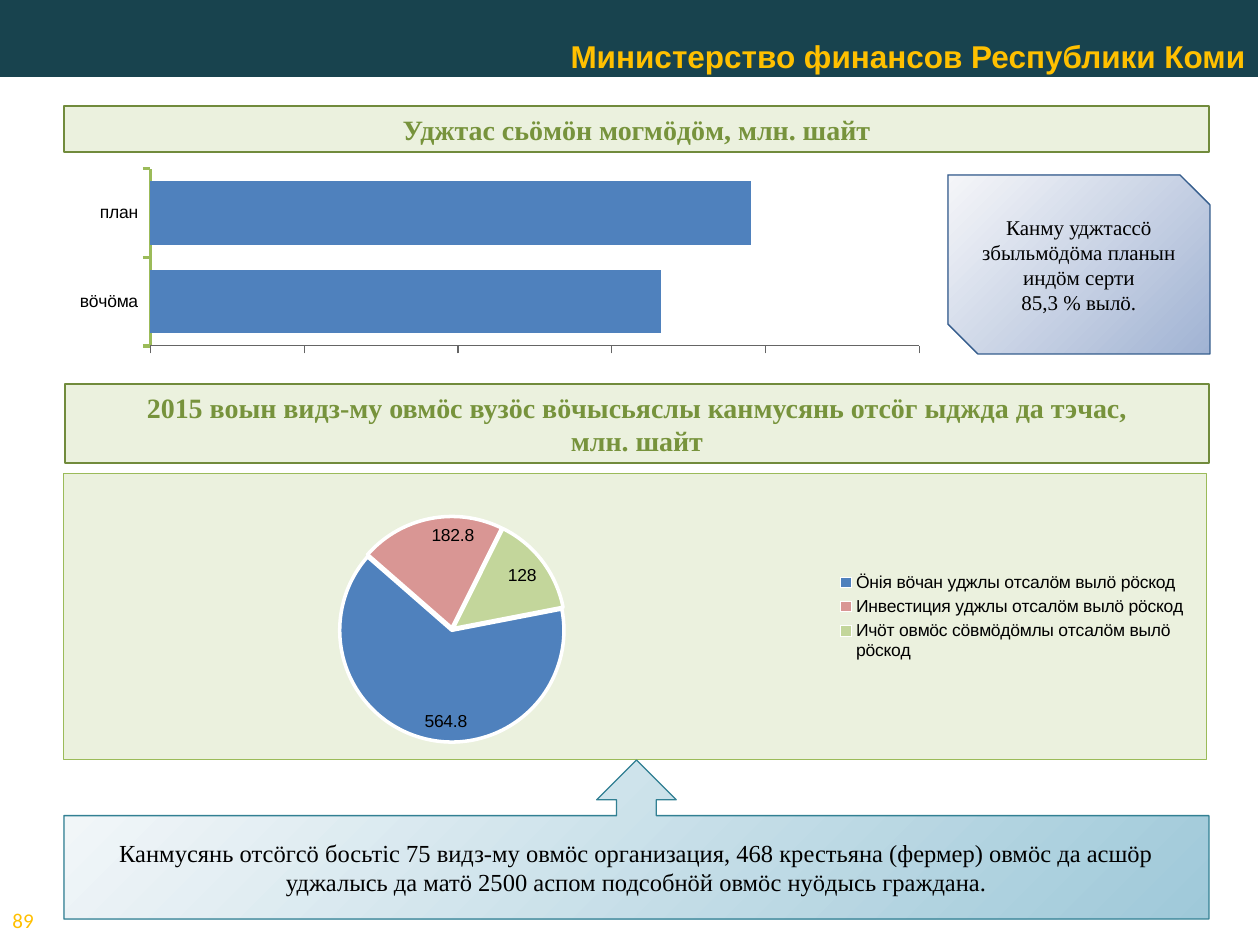
from lxml.etree import SubElement
from pptx import Presentation
from pptx.chart.data import CategoryChartData
from pptx.dml.color import RGBColor
from pptx.enum.chart import (XL_CHART_TYPE, XL_LABEL_POSITION, XL_LEGEND_POSITION,
                             XL_TICK_LABEL_POSITION, XL_TICK_MARK)
from pptx.enum.shapes import MSO_SHAPE
from pptx.enum.text import MSO_ANCHOR, PP_ALIGN
from pptx.oxml import parse_xml
from pptx.oxml.ns import nsdecls, qn
from pptx.util import Pt

EMU_PER_PX = 914400 / 126
SERIF = "Times New Roman"
PALE_GREEN = "EBF1DE"
GOLD = "FFC000"
HEADING = {"size": Pt(16), "name": SERIF, "bold": True}


def px(length):
    return round(length * EMU_PER_PX)


def frame(box):
    return [px(length) for length in box]


def rgb(value):
    return RGBColor.from_string(value)


def set_attributes(target, values):
    for name, value in values.items():
        setattr(target, name, value)


def write(text_frame, lines, font, color, align=PP_ALIGN.CENTER, **layout):
    set_attributes(text_frame, {"word_wrap": True, **layout})
    text_frame.text = "\n".join(lines)
    for paragraph in text_frame.paragraphs:
        paragraph.alignment = align
        set_attributes(paragraph.font, font)
        paragraph.font.color.rgb = rgb(color)


def outline(line, color, width=0.75):
    line.color.rgb = rgb(color)
    line.width = Pt(width)


def add_panel(slide, preset, box, fill, border=None, adjustments=()):
    """Add a preset shape; a pair of fills makes a gradient from the top left corner."""
    panel = slide.shapes.add_shape(preset, *frame(box))
    panel.shadow.inherit = False
    for index, value in enumerate(adjustments):
        panel.adjustments[index] = value
    if isinstance(fill, str):
        panel.fill.solid()
        panel.fill.fore_color.rgb = rgb(fill)
    else:
        panel.fill.gradient()
        for stop, position, color in zip(panel.fill.gradient_stops, (0, 1), fill):
            stop.position = position
            stop.color.rgb = rgb(color)
        gradient = panel.element.spPr.find(qn("a:gradFill"))
        gradient.remove(gradient.find(qn("a:lin")))
        SubElement(gradient, qn("a:path"), {"path": "circle"})
    if border:
        outline(panel.line, border)
    else:
        panel.line.fill.background()
    return panel.text_frame


def add_heading(slide, box, lines):
    text_frame = add_panel(slide, MSO_SHAPE.RECTANGLE, box, PALE_GREEN, "718B3C")
    write(text_frame, lines, HEADING, "77933C", vertical_anchor=MSO_ANCHOR.TOP)


def place_part(part, index, fractions, inner=False):
    """Give a plot area or legend a fixed place, as fractions of the chart."""
    for old in part.findall(qn("c:layout")):
        part.remove(old)
    layout = parse_xml(f"<c:layout {nsdecls('c')}><c:manualLayout/></c:layout>")
    settings = {"layoutTarget": "inner"} if inner else {}
    settings.update(xMode="edge", yMode="edge")
    settings.update(zip("xywh", fractions))
    for name, value in settings.items():
        SubElement(layout[0], qn(f"c:{name}"), {"val": str(value)})
    part.insert(index, layout)


def add_chart(slide, kind, box, categories, values, plot_place, fill, border=None):
    data = CategoryChartData()
    data.categories = categories
    data.add_series("Series 1", values)
    chart = slide.shapes.add_chart(kind, *frame(box), data).chart
    chart.has_title = False
    chart.has_legend = False
    set_attributes(chart.font, {"size": Pt(10), "name": "Arial"})
    chart.font.color.rgb = rgb("000000")
    chart_element = chart.element.find(qn("c:chart"))
    place_part(chart_element.find(qn("c:plotArea")), 0, plot_place, inner=True)
    stroke = f'<a:solidFill><a:srgbClr val="{border}"/></a:solidFill>' if border else "<a:noFill/>"
    chart_element.addnext(parse_xml(
        f'<c:spPr {nsdecls("c", "a")}><a:solidFill><a:srgbClr val="{fill}"/></a:solidFill>'
        f'<a:ln w="{Pt(0.75)}">{stroke}</a:ln></c:spPr>'))
    return chart


def add_plan_chart(slide):
    chart = add_chart(slide, XL_CHART_TYPE.BAR_CLUSTERED, (63, 165, 874, 189),
                      ["вӧчӧма", "план"], [85, 100], (0.1, 0.02, 0.88, 0.94), "FFFFFF")
    plot = chart.plots[0]
    set_attributes(plot, {"gap_width": 39, "vary_by_categories": False})
    bars = plot.series[0].format.fill
    bars.solid()
    bars.fore_color.rgb = rgb("4F81BD")
    ticks = {"has_major_gridlines": False, "major_tick_mark": XL_TICK_MARK.OUTSIDE,
             "minor_tick_mark": XL_TICK_MARK.NONE}
    set_attributes(chart.category_axis, ticks)
    outline(chart.category_axis.format.line, "9BBB59", 2)
    set_attributes(chart.value_axis, {
        **ticks, "minimum_scale": 0, "maximum_scale": 128, "major_unit": 25.6,
        "tick_label_position": XL_TICK_LABEL_POSITION.NONE})
    outline(chart.value_axis.format.line, "656565")


def add_support_chart(slide):
    categories = ["Ӧнiя вӧчан уджлы отсалӧм вылӧ рӧскод",
                  "Инвестиция уджлы отсалӧм вылӧ рӧскод",
                  "Ичӧт овмӧс сӧвмӧдӧмлы отсалӧм вылӧ рӧскод"]
    chart = add_chart(slide, XL_CHART_TYPE.PIE, (63, 473, 1144, 287), categories,
                      [564.8, 182.8, 128], (0.24, 0.15, 0.2, 0.79), PALE_GREEN, "9BBB59")
    chart.has_legend = True
    set_attributes(chart.legend, {"position": XL_LEGEND_POSITION.RIGHT,
                                  "include_in_layout": False})
    place_part(chart.element.find(".//" + qn("c:legend")), 1, (0.675, 0.33, 0.31, 0.34))
    plot = chart.plots[0]
    plot.has_data_labels = True
    set_attributes(plot.data_labels, {"show_value": True, "show_percentage": False,
                                      "position": XL_LABEL_POSITION.INSIDE_END})
    pie = plot.series[0]
    for index, color in enumerate(("4F81BD", "D99694", "C3D69B")):
        slice_format = pie.points[index].format
        slice_format.fill.solid()
        slice_format.fill.fore_color.rgb = rgb(color)
        outline(slice_format.line, "FFFFFF", 2)
    explosion = parse_xml(f'<c:explosion {nsdecls("c")} val="1"/>')
    pie.points[0].format
    pie._element.find(qn("c:dPt")).addprevious(explosion)
    rotation = plot._element.find(qn("c:firstSliceAng"))
    if rotation is None:
        rotation = SubElement(plot._element, qn("c:firstSliceAng"))
    rotation.set("val", "79")


def main():
    deck = Presentation()
    set_attributes(deck, {"slide_width": px(1260), "slide_height": px(945)})
    slide = deck.slides.add_slide(deck.slide_layouts[6])

    ministry = add_panel(slide, MSO_SHAPE.RECTANGLE, (0, -1, 1258, 78), "18434E")
    write(ministry, ["Министерство финансов Республики Коми"],
          {"size": Pt(18), "name": "Arial", "bold": True}, GOLD, PP_ALIGN.RIGHT,
          vertical_anchor=MSO_ANCHOR.BOTTOM, margin_bottom=px(2))
    page_number = slide.shapes.add_textbox(*frame((0, 895, 54, 50))).text_frame
    write(page_number, ["89"], {"size": Pt(12), "name": "Calibri"}, GOLD, PP_ALIGN.LEFT,
          vertical_anchor=MSO_ANCHOR.MIDDLE)

    add_plan_chart(slide)
    plan_note = add_panel(slide, MSO_SHAPE.SNIP_2_DIAG_RECTANGLE, (948, 175, 262, 179),
                          ("F5F6F9", "A1B3D3"), "355D8D", (0, 0.167))
    write(plan_note, ["Канму уджтассӧ збыльмӧдӧма планын индӧм серти", "85,3 % вылӧ."],
          {"size": Pt(12), "name": SERIF}, "000000", vertical_anchor=MSO_ANCHOR.MIDDLE)

    add_heading(slide, (64, 106, 1145, 46), ["Уджтас сьӧмӧн могмӧдӧм, млн. шайт"])
    add_heading(slide, (65, 384, 1144, 79),
                ["2015 воын видз-му овмӧс вузӧс вӧчысьяслы канмусянь отсӧг ыджда да тэчас,",
                 "млн. шайт"])
    add_support_chart(slide)
    recipients = add_panel(slide, MSO_SHAPE.UP_ARROW_CALLOUT, (64, 760, 1145, 159),
                           ("F5F8FA", "9FC9D9"), "328093", (0.25, 0.25, 0.25, 0.65))
    write(recipients,
          ["Канмусянь отсӧгсӧ босьтiс 75 видз-му овмӧс организация, 468 крестьяна (фермер) "
           "овмӧс да асшӧр уджалысь да матӧ 2500 аспом подсобнӧй овмӧс нуӧдысь граждана."],
          {"size": Pt(14), "name": SERIF}, "000000", vertical_anchor=MSO_ANCHOR.MIDDLE)
    deck.save("out.pptx")


if __name__ == "__main__":
    main()
